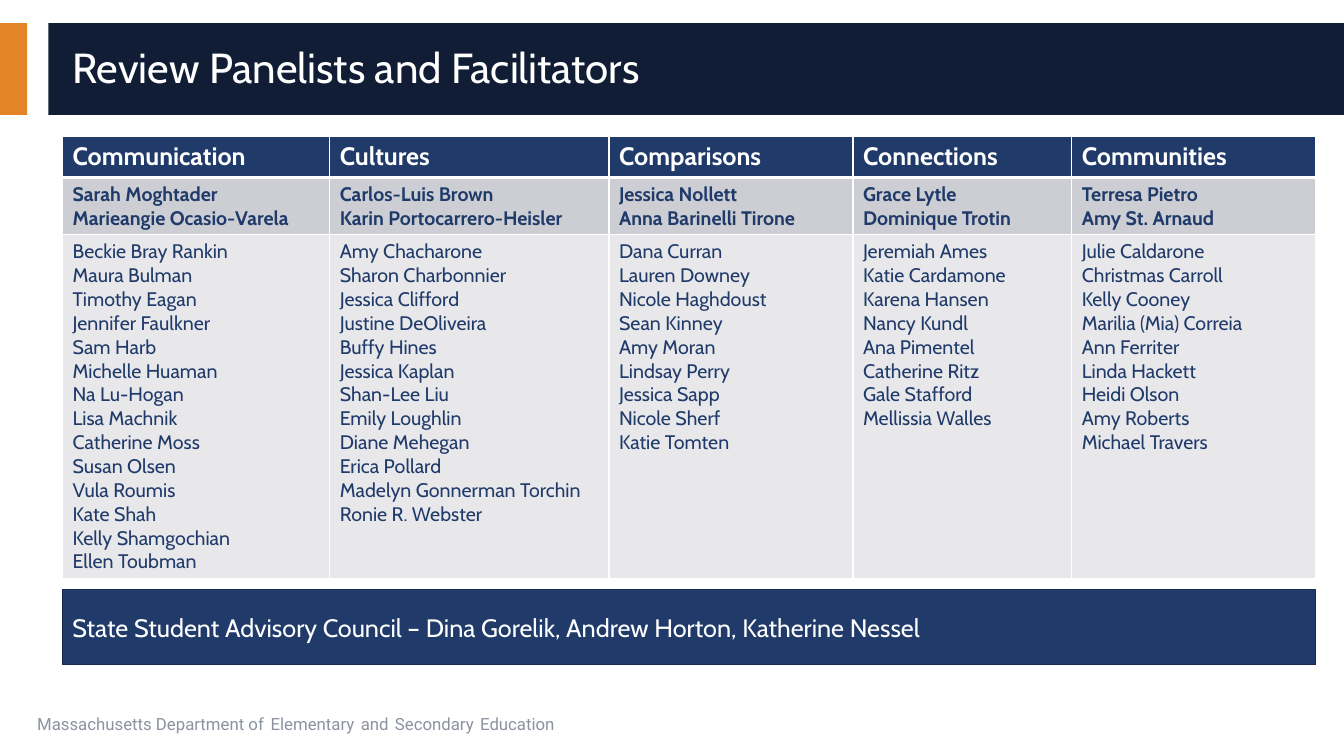
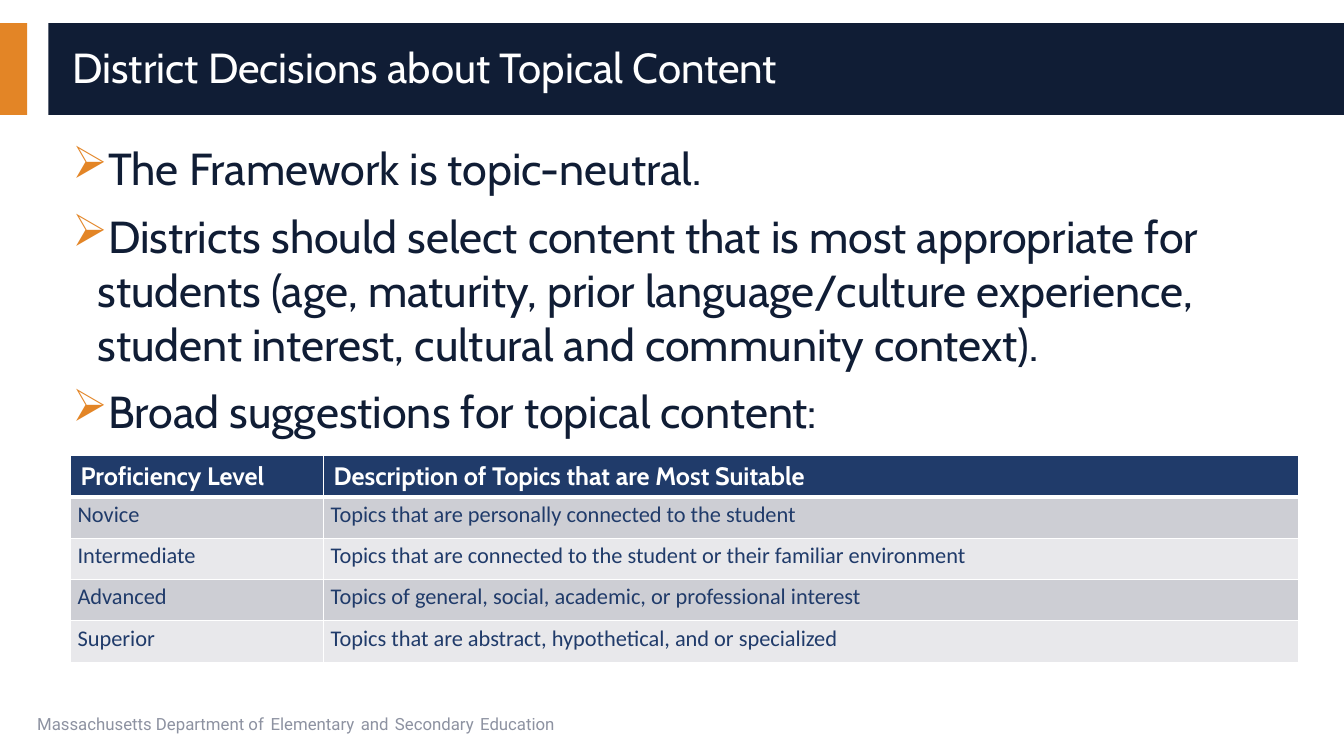
from lxml import etree
from pptx import Presentation
from pptx.dml.color import RGBColor
from pptx.enum.shapes import MSO_SHAPE
from pptx.enum.text import MSO_ANCHOR, PP_ALIGN
from pptx.oxml.ns import qn
from pptx.util import Inches, Pt

RECT = MSO_SHAPE.RECTANGLE
MIDDLE, TOP = MSO_ANCHOR.MIDDLE, MSO_ANCHOR.TOP
LEFT = PP_ALIGN.LEFT

WHITE = RGBColor(0xFF, 0xFF, 0xFF)
ORANGE = RGBColor(0xE3, 0x85, 0x26)
DARK = RGBColor(0x10, 0x1D, 0x35)
NAVY = RGBColor(0x20, 0x3B, 0x6A)
EDGE = RGBColor(0x18, 0x2C, 0x4E)
GREY = RGBColor(0x8D, 0x92, 0xA1)
MID = RGBColor(0xCD, 0xCE, 0xD4)
PALE = RGBColor(0xE8, 0xE8, 0xEB)

WIDE, HIGH = 13.33, 7.5
FOOTER = ["Massachusetts Department of", "Elementary", "and", "Secondary", "Education"]

PANELS = {
    "Communication": (
        ["Sarah Moghtader", "Marieangie Ocasio-Varela"],
        ["Beckie Bray Rankin", "Maura Bulman", "Timothy Eagan", "Jennifer Faulkner",
         "Sam Harb", "Michelle Huaman", "Na Lu-Hogan", "Lisa Machnik", "Catherine Moss",
         "Susan Olsen", "Vula Roumis", "Kate Shah", "Kelly Shamgochian", "Ellen Toubman"]),
    "Cultures": (
        ["Carlos-Luis Brown", "Karin Portocarrero-Heisler"],
        ["Amy Chacharone", "Sharon Charbonnier", "Jessica Clifford", "Justine DeOliveira",
         "Buffy Hines", "Jessica Kaplan", "Shan-Lee Liu", "Emily Loughlin", "Diane Mehegan",
         "Erica Pollard", "Madelyn Gonnerman Torchin", "Ronie R. Webster"]),
    "Comparisons": (
        ["Jessica Nollett", "Anna Barinelli Tirone"],
        ["Dana Curran", "Lauren Downey", "Nicole Haghdoust", "Sean Kinney", "Amy Moran",
         "Lindsay Perry", "Jessica Sapp", "Nicole Sherf", "Katie Tomten"]),
    "Connections": (
        ["Grace Lytle", "Dominique Trotin"],
        ["Jeremiah Ames", "Katie Cardamone", "Karena Hansen", "Nancy Kundl", "Ana Pimentel",
         "Catherine Ritz", "Gale Stafford", "Mellissia Walles"]),
    "Communities": (
        ["Terresa Pietro", "Amy St. Arnaud"],
        ["Julie Caldarone", "Christmas Carroll", "Kelly Cooney", "Marilia (Mia) Correia",
         "Ann Ferriter", "Linda Hackett", "Heidi Olson", "Amy Roberts", "Michael Travers"]),
}

POINTS = [
    "The Framework is topic-neutral.",
    "Districts should select content that is most appropriate for students (age, maturity, "
    "prior language/culture experience, student interest, cultural and community context).",
    "Broad suggestions for topical content:",
]

LEVELS = [
    ("Novice", "Topics that are personally connected to the student"),
    ("Intermediate", "Topics that are connected to the student or their familiar environment"),
    ("Advanced", "Topics of general, social, academic, or professional interest"),
    ("Superior", "Topics that are abstract, hypothetical, and or specialized"),
]


def inches(*sizes):
    return [Inches(size) for size in sizes]


def add_run(para, text, size, color, font="Cabin", bold=False):
    run = para.add_run()
    run.text = text
    run.font.size, run.font.name, run.font.bold = Pt(size), font, bold
    run.font.color.rgb = color


def add_paras(frame, lines, *style, **more):
    """Write one paragraph per line, all in the same style."""
    for i, line in enumerate(lines):
        para = frame.add_paragraph() if i else frame.paragraphs[0]
        para.alignment = LEFT
        add_run(para, line, *style, **more)
    return frame.paragraphs


def add_bullet(para, char, color, indent):
    props = para._p.get_or_add_pPr()
    props.set("marL", str(Inches(indent)))
    props.set("indent", str(-Inches(indent)))
    tint = etree.SubElement(props, qn("a:buClr"))
    etree.SubElement(tint, qn("a:srgbClr"), val=str(color))
    etree.SubElement(props, qn("a:buChar"), char=char)


def add_edges(cell, below):
    """Draw white cell borders; the lower one may be thicker."""
    props = cell._tc.get_or_add_tcPr()
    for side, width in zip("LRTB", (1, 1, 1, below)):
        line = etree.SubElement(props, qn("a:ln" + side), w=str(Pt(width)))
        fill = etree.SubElement(line, qn("a:solidFill"))
        etree.SubElement(fill, qn("a:srgbClr"), val=str(WHITE))


class Deck:
    def __init__(self):
        self.file = Presentation()
        self.file.slide_width, self.file.slide_height = inches(WIDE, HIGH)

    def start(self, title):
        """Add a slide with its bands, footer and title."""
        self.slide = self.file.slides.add_slide(self.file.slide_layouts[6])
        self.rect(0, 0.23, 0.27, 0.91, ORANGE)
        self.rect(0.48, 0.23, WIDE - 0.48, 0.91, DARK)
        para = self.box(0.27, 6.95, 8.44, 0.4).paragraphs[0]
        for i, word in enumerate(FOOTER):
            if i:
                add_run(para, " ", 18, NAVY, "Roboto")
            add_run(para, word, 12, GREY, "Roboto")
        frame = self.box(0.62, 0.32, 12.44, 0.74, MIDDLE)
        add_paras(frame, [title], 30, WHITE)[0].line_spacing = 0.9

    def rect(self, left, top, width, height, color, edge=None):
        shape = self.slide.shapes.add_shape(RECT, *inches(left, top, width, height))
        shape.shadow.inherit = False
        shape.fill.solid()
        shape.fill.fore_color.rgb = color
        if edge is None:
            shape.line.fill.background()
        else:
            shape.line.color.rgb = edge
            shape.line.width = Pt(1)
        return shape.text_frame

    def box(self, left, top, width, height, anchor=TOP):
        frame = self.slide.shapes.add_textbox(*inches(left, top, width, height)).text_frame
        frame.word_wrap = True
        frame.vertical_anchor = anchor
        return frame

    def banner(self, text, *place):
        frame = self.rect(*place, NAVY, EDGE)
        frame.word_wrap = True
        frame.vertical_anchor = MIDDLE
        add_paras(frame, [text], 18, WHITE)

    def bullets(self, lines, *place):
        for para in add_paras(self.box(*place), lines, 32, DARK):
            para.space_before = Pt(10)
            add_bullet(para, "➢", ORANGE, 0.25)

    def table(self, left, top, cols, rows, heads):
        """Add an empty table with its heading row and banded fills."""
        place = inches(left, top, sum(cols), sum(rows))
        table = self.slide.shapes.add_table(len(rows), len(cols), *place).table
        for col, width in zip(table.columns, cols):
            col.width = Inches(width)
        for i, (row, height) in enumerate(zip(table.rows, rows)):
            row.height = Inches(height)
            for cell in row.cells:
                add_edges(cell, 1 if i else 3)
                cell.fill.solid()
                cell.fill.fore_color.rgb = (MID if i % 2 else PALE) if i else NAVY
        for cell, head in zip(table.rows[0].cells, heads):
            add_paras(cell.text_frame, [head], 18, WHITE, bold=True)
        return table


def add_panels(deck):
    deck.start("Review Panelists and Facilitators")
    cols = [2.65, 2.77, 2.42, 2.17, 2.42]
    table = deck.table(0.62, 1.35, cols, [0.41, 0.57, 3.41], PANELS)
    for col, groups in enumerate(PANELS.values()):
        for row, names in enumerate(groups, 1):
            frame = table.cell(row, col).text_frame
            add_paras(frame, names, 14, NAVY, bold=row == 1)
    deck.banner("State Student Advisory Council – Dina Gorelik, Andrew Horton, Katherine Nessel",
                0.62, 5.85, 12.43, 0.74)


def add_topics(deck):
    deck.start("District Decisions about Topical Content")
    deck.bullets(POINTS, 0.62, 1.35, 12.44, 5.52)
    heads = ["Proficiency Level", "Description of Topics that are Most Suitable"]
    table = deck.table(0.7, 4.52, [2.51, 9.67], [0.41] * 5, heads)
    for row, texts in enumerate(LEVELS, 1):
        for cell, text in zip(table.rows[row].cells, texts):
            cell.margin_left = cell.margin_right = Inches(0.07)
            cell.margin_top = cell.margin_bottom = 0
            paras = add_paras(cell.text_frame, [text], 16, NAVY, "Calibri")
            paras[0].line_spacing = 1.15


def main():
    deck = Deck()
    add_panels(deck)
    add_topics(deck)
    deck.file.save("out.pptx")


if __name__ == "__main__":
    main()
